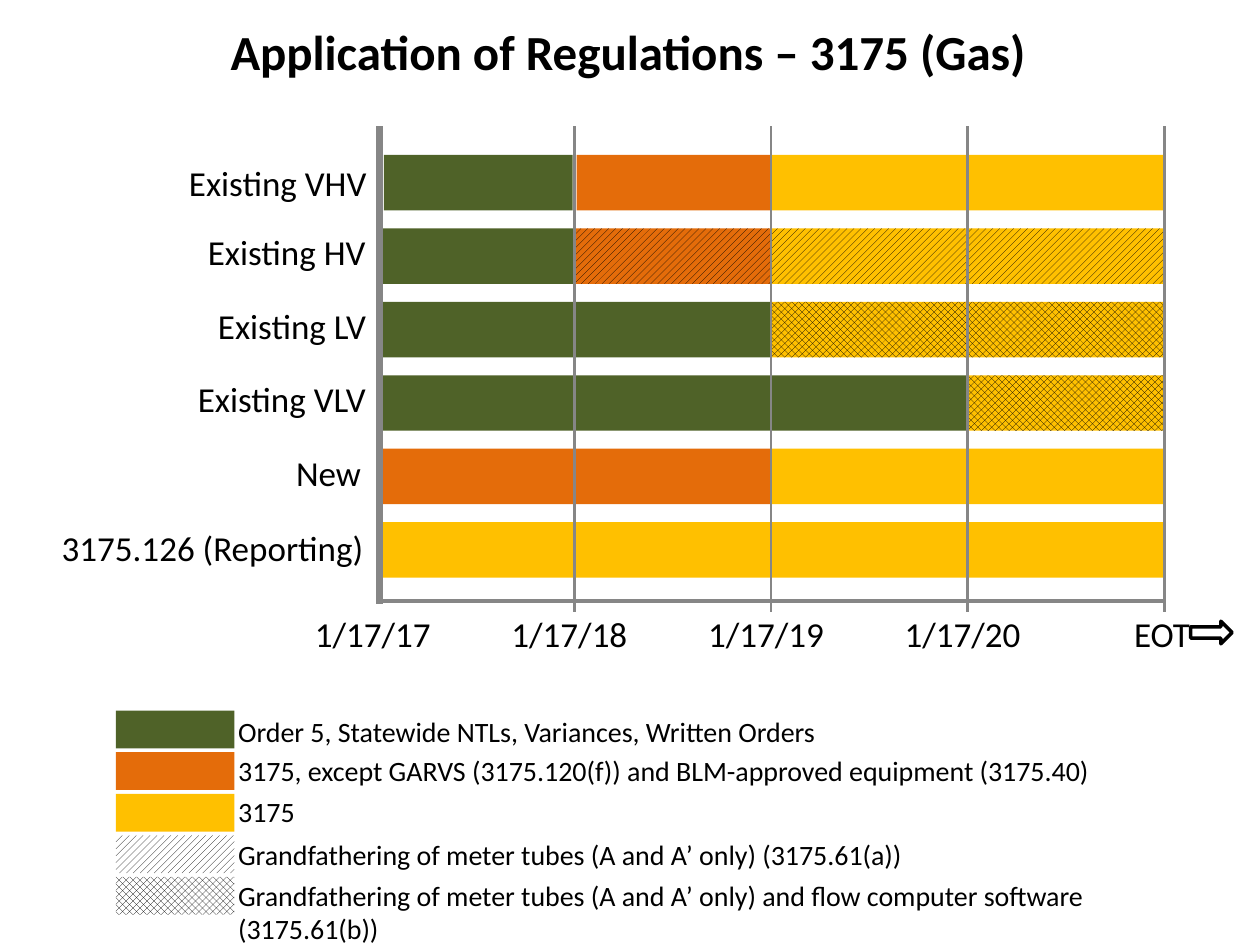
from lxml import etree
from pptx import Presentation
from pptx.dml.color import RGBColor
from pptx.enum.dml import MSO_PATTERN
from pptx.enum.shapes import MSO_CONNECTOR, MSO_SHAPE
from pptx.enum.text import MSO_ANCHOR, PP_ALIGN
from pptx.oxml.ns import qn
from pptx.util import Inches, Pt

RECT, ARROW = MSO_SHAPE.RECTANGLE, MSO_SHAPE.RIGHT_ARROW
STRAIGHT = MSO_CONNECTOR.STRAIGHT
LEFT, TOP = PP_ALIGN.LEFT, MSO_ANCHOR.TOP
DIAGONAL = MSO_PATTERN.WIDE_UPWARD_DIAGONAL
CHECK = MSO_PATTERN.LARGE_CHECKER_BOARD

FONT = "Calibri"
COLORS = {"green": "4F6228", "orange": "E46C0A", "yellow": "FFC000",
          "gray": "868686", "black": "000000", "white": "FFFFFF"}

TITLE = "Application of Regulations – 3175 (Gas)"
ROWS = [
    ("Existing VHV", (1.5, 1.28, 1.43),
     [(0.03, 0.99, "green", None), (1.01, 2, "orange", None), (2, 4, "yellow", None)]),
    ("Existing HV", (1.65, 1.83, 1.27),
     [(0, 1, "green", None), (1, 2, "orange", DIAGONAL), (2, 4, "yellow", DIAGONAL)]),
    ("Existing LV", (1.73, 2.42, 1.19),
     [(0, 2, "green", None), (2, 4, "yellow", CHECK)]),
    ("Existing VLV", (1.57, 3, 1.35),
     [(0, 3, "green", None), (3, 4, "yellow", CHECK)]),
    ("New", (2.35, 3.58, 0.52),
     [(0, 2, "orange", None), (2, 4, "yellow", None)]),
    ("3175.126 (Reporting)", (0.49, 4.18, 2.54),
     [(0, 4, "yellow", None)]),
]
DATES = ["1/17/17", "1/17/18", "1/17/19", "1/17/20"]
LEGEND = [
    ("Order 5, Statewide NTLs, Variances, Written Orders", "green", None, 5.67, 5.96),
    ("3175, except GARVS (3175.120(f)) and BLM-approved equipment (3175.40)",
     "orange", None, 5.98, 7.88),
    ("3175", "yellow", None, 6.31, 0.61),
    ("Grandfathering of meter tubes (A and A’ only) (3175.61(a))",
     "white", DIAGONAL, 6.65, 7.56),
    ("Grandfathering of meter tubes (A and A’ only) and flow computer software "
     "(3175.61(b))", "white", CHECK, 6.97, 7.56),
]

AXIS_X, YEAR_W = 3, 1.56
BAR_TOP, BAR_PITCH, BAR_H = 1.23, 0.583, 0.44
GRID_TOP, AXIS_Y, TICK_Y = 1, 4.77, 4.86
SWATCH_TOP, SWATCH_PITCH = 5.64, 0.33


def rgb(name):
    return RGBColor.from_string(COLORS[name])


def year_x(year):
    return AXIS_X + year * YEAR_W


def set_text(sp, text, size, wrap=True, bold=False):
    tf = sp.text_frame
    tf.margin_left = tf.margin_right = tf.margin_top = tf.margin_bottom = 0
    tf.word_wrap = wrap
    tf.vertical_anchor = TOP
    tf.text = text
    p = tf.paragraphs[0]
    p.alignment = LEFT
    p.font.name, p.font.size, p.font.bold = FONT, Pt(size), bold
    p.font.color.rgb = rgb("black")


def add_text(s, text, x, y, w, h, size, wrap=True):
    sp = s.shapes.add_textbox(Inches(x), Inches(y), Inches(w), Inches(h))
    set_text(sp, text, size, wrap)


def add_bar(s, x, y, w, h, color, pattern):
    sp = s.shapes.add_shape(RECT, Inches(x), Inches(y), Inches(w), Inches(h))
    sp.shadow.inherit = False
    sp.line.fill.background()
    if pattern is None:
        sp.fill.solid()
        sp.fill.fore_color.rgb = rgb(color)
    else:
        sp.fill.patterned()
        sp.fill.pattern = pattern
        sp.fill.fore_color.rgb = rgb("black")
        sp.fill.back_color.rgb = rgb(color)


def add_line(s, x1, y1, x2, y2, width):
    ln = s.shapes.add_connector(STRAIGHT, Inches(x1), Inches(y1), Inches(x2), Inches(y2))
    ln.line.color.rgb = rgb("gray")
    ln.line.width = Pt(width)
    etree.SubElement(ln._element.spPr, qn("a:effectLst"))


def main():
    prs = Presentation()
    prs.slide_width, prs.slide_height = Inches(10), Inches(7.5)
    s = prs.slides.add_slide(prs.slide_layouts[5])

    title = s.shapes.title
    title.left, title.top = Inches(1.83), Inches(0.17)
    title.width, title.height = Inches(6.79), Inches(0.47)
    set_text(title, TITLE, 28, bold=True)

    for i, (label, (x, y, w), bars) in enumerate(ROWS):
        add_text(s, label, x, y, w, 0.34, 20, wrap=False)
        for start, end, color, pattern in bars:
            add_bar(s, year_x(start), BAR_TOP + i * BAR_PITCH,
                    (end - start) * YEAR_W, BAR_H, color, pattern)

    add_line(s, AXIS_X, AXIS_Y, year_x(4), AXIS_Y, 1.75)
    add_line(s, AXIS_X + 0.01, GRID_TOP, AXIS_X + 0.01, AXIS_Y + 0.02, 4)
    for year in range(1, 5):
        add_line(s, year_x(year), GRID_TOP, year_x(year), TICK_Y, 1.5)

    for year, date in enumerate(DATES):
        add_text(s, date, year_x(year) - 0.5, TICK_Y, 0.93, 0.34, 20, wrap=False)
    add_text(s, "EOT", 9, TICK_Y, 0.45, 0.34, 20, wrap=False)

    arrow = s.shapes.add_shape(ARROW, Inches(9.45), Inches(4.93), Inches(0.33), Inches(0.18))
    arrow.shadow.inherit = False
    arrow.fill.background()
    arrow.line.color.rgb = rgb("black")
    arrow.line.width = Pt(2)

    for i, (text, color, pattern, y, w) in enumerate(LEGEND):
        add_bar(s, 0.92, SWATCH_TOP + i * SWATCH_PITCH, 0.94, 0.3, color, pattern)
        add_text(s, text, 1.89, y, w, 0.27, 16)

    prs.save("out.pptx")


if __name__ == "__main__":
    main()
